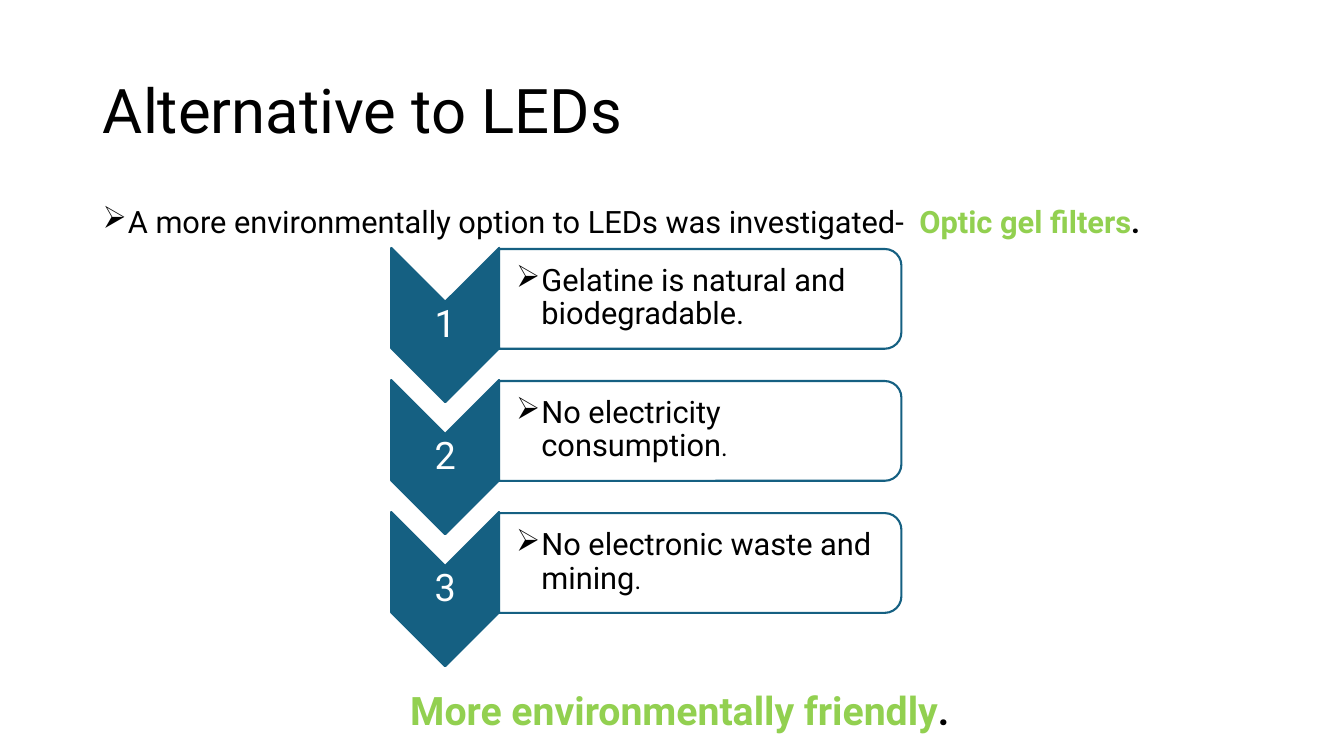
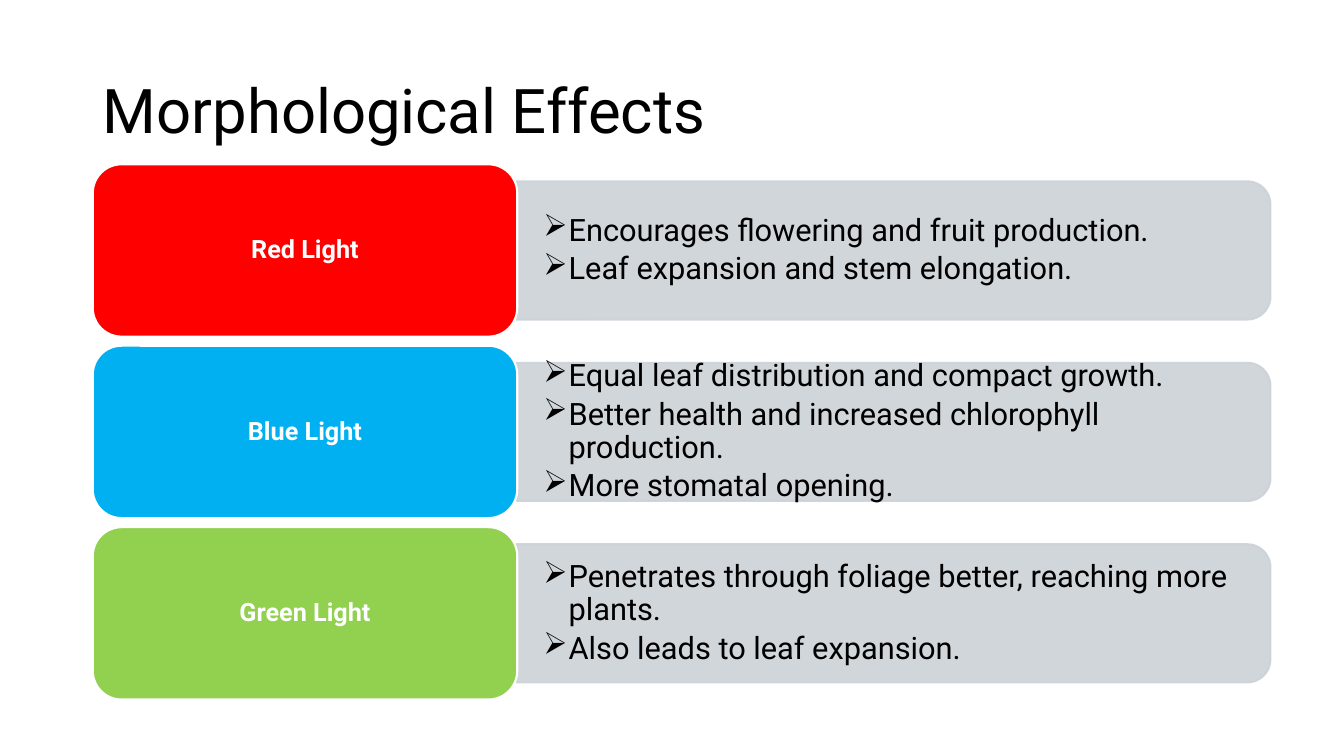
from pptx import Presentation
from pptx import util as u
from pptx.dml import color
from pptx.enum import shapes, text
from pptx.oxml import ns
from lxml import etree

FONT = "Roboto"
BLACK, WHITE = "000000", "FFFFFF"
TEAL, GREY, LIME = "156082", "CCD2D8", "92D050"
SHAPE = shapes.MSO_SHAPE
MID = text.MSO_ANCHOR.MIDDLE
TOP = text.MSO_ANCHOR.TOP
LEFT, CENTER = text.PP_ALIGN.LEFT, text.PP_ALIGN.CENTER
PLAIN = {"size": 22, "color": BLACK}
SMALL = {"size": 18, "color": BLACK}
TITLE = {"size": 44, "color": BLACK}
DIGIT = {"size": 27, "color": WHITE}
LABEL = {"size": 18, "color": WHITE, "bold": True}
BULLET = {"bullet": True, "line_spacing": 0.9, "space_after": u.Pt(3.6)}
MIDDLE = {"alignment": CENTER, "line_spacing": 0.9}


def rgb(code):
    return color.RGBColor.from_string(code)


def inches(box):
    return [u.Inches(round(n, 3)) for n in box]


def add_bullet(para):
    props = para._p.get_or_add_pPr()
    props.set("marL", str(u.Inches(0.25)))
    props.set("indent", str(u.Inches(-0.25)))
    mark = etree.SubElement(props, ns.qn("a:buChar"))
    mark.set("char", "➢")


def write(frame, paras, look, anchor=MID, pad=(0.1, 0.05, 0.1, 0.05)):
    frame.word_wrap = True
    frame.auto_size = text.MSO_AUTO_SIZE.NONE
    frame.vertical_anchor = anchor
    sides = ("left", "top", "right", "bottom")
    for side, size in zip(sides, pad):
        setattr(frame, "margin_" + side, u.Inches(size))
    for i, runs in enumerate(paras):
        para = frame.add_paragraph() if i else frame.paragraphs[0]
        if look.get("bullet"):
            add_bullet(para)
        for key, value in look.items():
            if key != "bullet":
                setattr(para, key, value)
        for words, style in runs:
            run = para.add_run()
            run.text = words
            form = {"name": FONT, "bold": False, **style}
            form["size"] = u.Pt(form["size"])
            run.font.color.rgb = rgb(form.pop("color"))
            for key, value in form.items():
                setattr(run.font, key, value)


def add_text(slide, box, paras, look, **rest):
    label = slide.shapes.add_textbox(*inches(box))
    write(label.text_frame, paras, look, **rest)


def add_block(slide, kind, box, fill, line, alpha=()):
    block = slide.shapes.add_shape(kind, *inches(box))
    block.shadow.inherit = False
    block.fill.solid()
    block.fill.fore_color.rgb = rgb(fill)
    block.line.color.rgb = rgb(line)
    block.line.width = u.Pt(1.5)
    props = block._element.spPr
    paints = {"fill": "a:solidFill", "line": "a:ln/a:solidFill"}
    for part in alpha:
        tint = props.find(paints[part] + "/a:srgbClr", ns._nsmap)
        etree.SubElement(tint, ns.qn("a:alpha")).set("val", "90000")
    return block


def add_turned(slide, kind, box, *paint, **rest):
    x, y, wide, high = box
    shift = (wide - high) / 2
    turned = (x + shift, y - shift, high, wide)
    add_block(slide, kind, turned, *paint, **rest).rotation = 90


def add_slide(deck, title):
    slide = deck.slides.add_slide(deck.slide_layouts[5])
    head = slide.shapes.title
    box = inches((0.92, 0.4, 11.5, 1.45))
    for key, value in zip(("left", "top", "width", "height"), box):
        setattr(head, key, value)
    look = {"alignment": LEFT, "line_spacing": 0.9}
    write(head.text_frame, [[(title, TITLE)]], look)
    return slide


def add_step(slide, x, y, digit, runs):
    add_turned(slide, SHAPE.CHEVRON, (x, y, 1.07, 1.53), TEAL, TEAL)
    add_text(slide, (x, y + 0.54, 1.07, 0.46), [[(digit, DIGIT)]],
             MIDDLE, pad=[0.02] * 4)
    left = x + 1.07
    add_turned(slide, SHAPE.ROUND_2_SAME_RECTANGLE,
               (left, y + 0.01, 3.99, 0.99), WHITE, TEAL, alpha=("fill",))
    add_text(slide, (left, y + 0.05, 3.94, 0.9), [runs], BULLET,
             pad=(0.17, 0.02, 0.02, 0.02))


def add_light(slide, x, y, name, fill, lines):
    left = x + 4.2
    add_turned(slide, SHAPE.ROUND_2_SAME_RECTANGLE,
               (left, y + 0.17, 7.48, 1.37), GREY, GREY,
               alpha=("fill", "line"))
    add_text(slide, (left, y + 0.24, 7.41, 1.23),
             [[(line, PLAIN)] for line in lines], BULLET,
             pad=(0.27, 0.14, 0.27, 0.14))
    card = add_block(slide, SHAPE.ROUNDED_RECTANGLE,
                     (x, y, 4.21, 1.71), fill, WHITE)
    write(card.text_frame, [[(name, LABEL)]], MIDDLE)


def make_steps(deck):
    slide = add_slide(deck, "Alternative to LEDs")
    strong = {"size": 22, "color": LIME, "bold": True}
    intro = [
        ("A more environmentally option to LEDs was investigated-  ", PLAIN),
        ("Optic gel filters", strong),
        (".", {**strong, "color": BLACK}),
    ]
    add_text(slide, (0.92, 2, 11.5, 0.5), [intro], BULLET, anchor=TOP)
    steps = [
        [("Gelatine is natural and biodegradable.", PLAIN)],
        [("No electricity consumption", PLAIN), (".", SMALL)],
        [("No electronic waste and mining", PLAIN), (".", SMALL)],
    ]
    for i, runs in enumerate(steps):
        add_step(slide, 3.88, 2.46 + 1.31 * i, str(i + 1), runs)
    big = {**strong, "size": 28}
    close = [("More environmentally friendly", big),
             (".", {**big, "color": BLACK})]
    add_text(slide, (3.97, 6.76, 6.02, 0.57), [close], {}, anchor=TOP)


def make_lights(deck):
    slide = add_slide(deck, "Morphological Effects")
    lights = [
        ("Red Light", "FF0000", [
            "Encourages flowering and fruit production.",
            "Leaf expansion and stem elongation."]),
        ("Blue Light", "00B0F0", [
            "Equal leaf distribution and compact growth.",
            "Better health and increased chlorophyll production.",
            "More stomatal opening."]),
        ("Green Light", LIME, [
            "Penetrates through foliage better, reaching more plants.",
            "Also leads to leaf expansion."]),
    ]
    for i, light in enumerate(lights):
        add_light(slide, 0.92, 1.63 + 1.8 * i, *light)


def main():
    deck = Presentation()
    deck.slide_width = u.Inches(13.33)
    deck.slide_height = u.Inches(7.5)
    make_steps(deck)
    make_lights(deck)
    deck.save("out.pptx")


if __name__ == "__main__":
    main()
